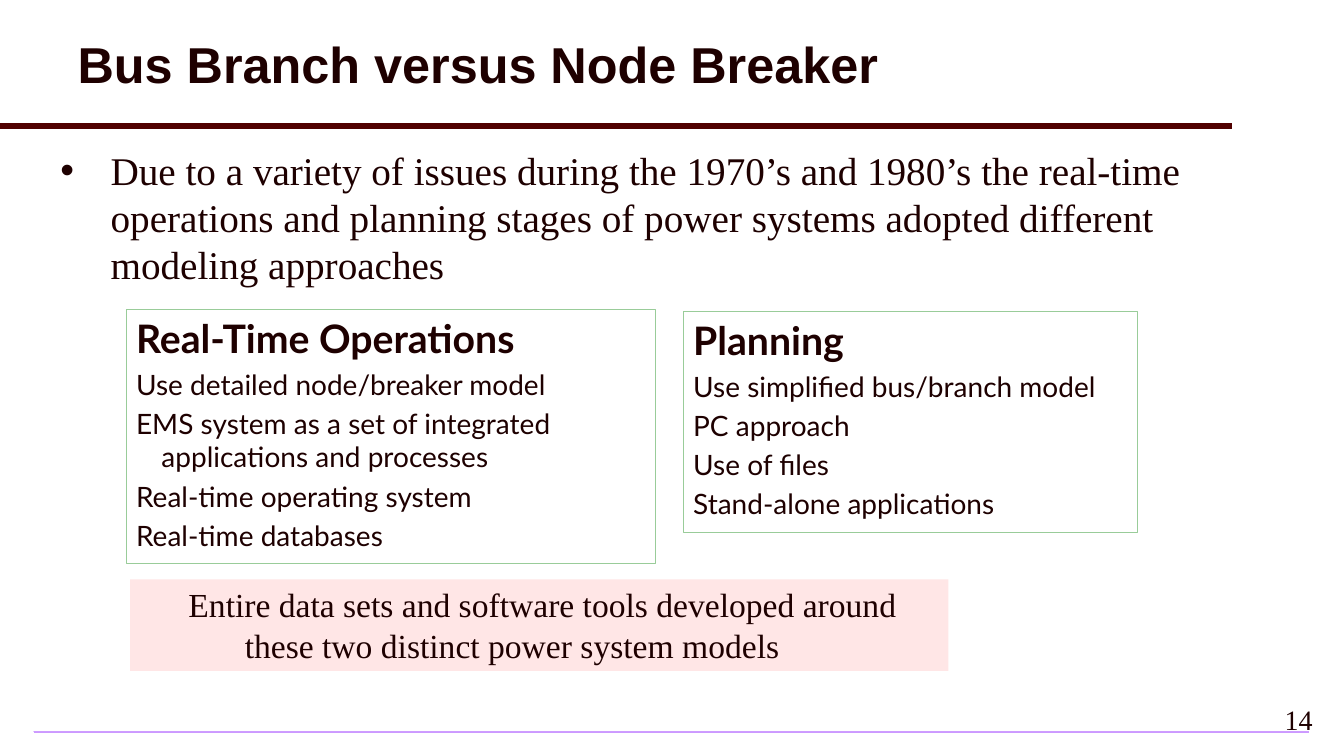
from lxml import etree
from pptx import Presentation, util as u
from pptx.dml.color import RGBColor
from pptx.enum import shapes, text
from pptx.oxml.ns import qn

INK = RGBColor(0x1E, 0x00, 0x00)
MAROON = RGBColor(0x50, 0x00, 0x00)
GREEN = RGBColor(0x99, 0xCC, 0x99)
PINK = RGBColor(0xFF, 0xE6, 0xE6)
LILAC = RGBColor(0xCC, 0x99, 0xFF)
PALE_LILAC = RGBColor(0xF3, 0xEB, 0xFF)
SERIF, SANS, HEADING = "Times New Roman", "Lato", "Arial"


def format_para(para, font, size, bold=False, left=0, indent=0, bullet=None):
    """Set the indents, optional bullet and run format of one paragraph."""
    props = para._p.get_or_add_pPr()
    props.set("marL", str(u.Cm(left)))
    props.set("indent", str(u.Cm(indent)))
    if bullet:
        colour = etree.SubElement(props, qn("a:buClr"))
        etree.SubElement(colour, qn("a:srgbClr")).set("val", str(INK))
        etree.SubElement(props, qn("a:buFont")).set("typeface", HEADING)
        etree.SubElement(props, qn("a:buChar")).set("char", bullet)
    for span in para.runs:
        span.font.name = font
        span.font.size = u.Pt(size)
        span.font.bold = bold
        span.font.color.rgb = INK


def add_panel(page, box, fill=None, line=None):
    """Add a left-aligned rectangle and return its text frame."""
    panel = page.shapes.add_shape(shapes.MSO_SHAPE.RECTANGLE, *map(u.Cm, box))
    panel.shadow.inherit = False
    if fill:
        panel.fill.solid()
        panel.fill.fore_color.rgb = fill
    else:
        panel.fill.background()
    if line:
        panel.line.color.rgb = line
        panel.line.width = u.Pt(0.75)
    else:
        panel.line.fill.background()
    frame = panel.text_frame
    frame.word_wrap = True
    frame.vertical_anchor = text.MSO_ANCHOR.TOP
    return frame


def add_text(page, box, words):
    """Add a wrapping text box and return its only paragraph."""
    frame = page.shapes.add_textbox(*map(u.Cm, box)).text_frame
    frame.word_wrap = True
    frame.text = words
    return frame.paragraphs[0]


def add_header(page, box, words):
    """Title with the maroon rule along its lower edge."""
    left, top, width, height = box
    rule_y = u.Cm(top + height)
    rule = page.shapes.add_connector(
        shapes.MSO_CONNECTOR.STRAIGHT, 0, rule_y, u.Cm(width), rule_y)
    rule.line.color.rgb = MAROON
    rule.line.width = u.Pt(4)
    etree.SubElement(rule._element.spPr, qn("a:effectLst"))

    title = page.shapes.title
    title.left, title.top, title.width, title.height = map(u.Cm, box)
    frame = title.text_frame
    frame.text = words
    frame.vertical_anchor = text.MSO_ANCHOR.MIDDLE
    para = frame.paragraphs[0]
    para.alignment = text.PP_ALIGN.LEFT
    para.line_spacing = 0.9
    format_para(para, HEADING, 36, bold=True)


def add_model_card(page, box, heading, points):
    """Outlined card: a bold heading above hanging lines."""
    frame = add_panel(page, box, line=GREEN)
    frame.text = "\n".join([heading, *points])
    first, *rest = frame.paragraphs
    first.alignment = text.PP_ALIGN.LEFT
    format_para(first, SANS, 28, bold=True)
    for para in rest:
        para.alignment = text.PP_ALIGN.LEFT
        para.space_before = u.Pt(4)
        format_para(para, SANS, 20, left=0.64, indent=-0.64)


def add_callout(page, box, words):
    """Pink band with a hanging second line."""
    frame = add_panel(page, box, fill=PINK)
    frame.text = words
    para = frame.paragraphs[0]
    para.alignment = text.PP_ALIGN.LEFT
    format_para(para, SERIF, 24, left=2.64, indent=-1.42)


def add_footer(page, box, number):
    """Thin gradient strip with the page number above its right end."""
    left, top, width, height = box
    strip = page.shapes.add_shape(
        shapes.MSO_SHAPE.RECTANGLE, *map(u.Cm, box))
    strip.shadow.inherit = False
    strip.line.fill.background()
    strip.fill.gradient()
    for stop, colour in zip(strip.fill.gradient_stops, (LILAC, PALE_LILAC)):
        stop.color.rgb = colour
    # Turn the linear gradient into one that spreads from the centre
    gradient = strip._element.spPr.find(qn("a:gradFill"))
    gradient.remove(gradient.find(qn("a:lin")))
    spread = etree.SubElement(gradient, qn("a:path"))
    spread.set("path", "rect")
    centre = etree.SubElement(spread, qn("a:fillToRect"))
    for side in "ltrb":
        centre.set(side, "50000")

    para = add_text(page, (left + width - 4.95, top - 0.84, 5.28, 1.27), number)
    para.alignment = text.PP_ALIGN.RIGHT
    format_para(para, SERIF, 20)


def build_comparison(page):
    add_footer(page, (0.84, 18.42, 32.16, 0.03), "14")
    add_header(page, (1.7, 0.2, 31.04, 2.98), "Bus Branch versus Node Breaker")

    # Introductory bullet
    intro = add_text(
        page, (1.27, 3.56, 29.41, 4.5),
        "Due to a variety of issues during the 1970’s and 1980’s the real-time "
        "operations and planning stages of power systems adopted different "
        "modeling approaches")
    format_para(intro, SERIF, 28, left=1.27, indent=-1.27, bullet="•")

    # The two modeling approaches
    add_model_card(page, (17.22, 7.85, 11.46, 5.56), "Planning", [
        "Use simplified bus/branch model",
        "PC approach",
        "Use of files",
        "Stand-alone applications"])
    add_model_card(page, (3.18, 7.8, 13.34, 6.4), "Real-Time Operations", [
        "Use detailed node/breaker model",
        "EMS system as a set of integrated applications and processes",
        "Real-time operating system",
        "Real-time databases"])

    # Conclusion
    add_callout(
        page, (3.28, 14.6, 20.62, 2.31),
        "Entire data sets and software tools developed around these two "
        "distinct power system models")


def main():
    deck = Presentation()
    deck.slide_width, deck.slide_height = u.Cm(33.87), u.Cm(19.05)
    build_comparison(deck.slides.add_slide(deck.slide_layouts[5]))
    deck.save("out.pptx")


if __name__ == "__main__":
    main()
